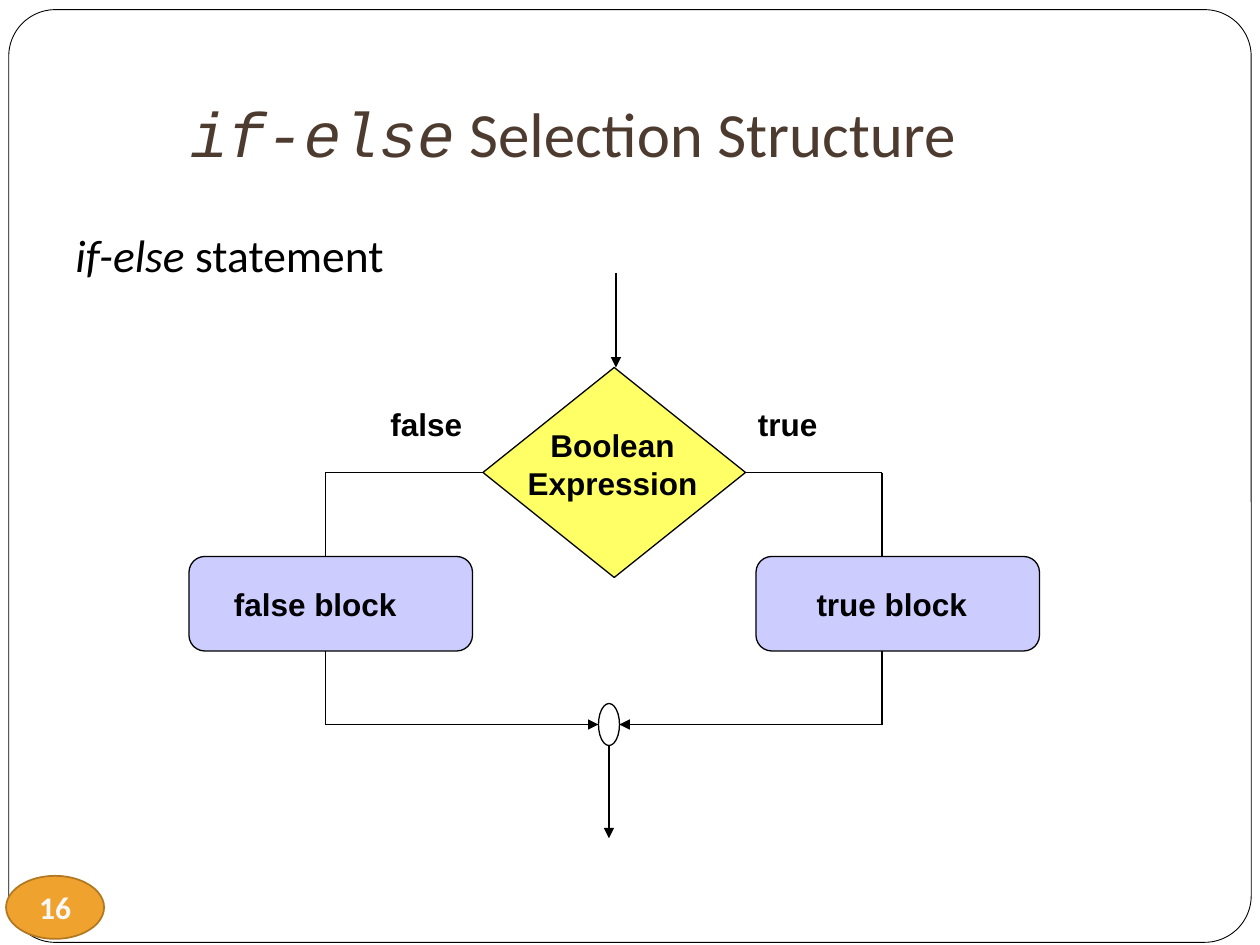
from lxml.etree import SubElement
from pptx import Presentation
from pptx.dml.color import RGBColor
from pptx.enum.shapes import MSO_CONNECTOR as Connector, MSO_SHAPE as Shape
from pptx.enum.text import MSO_ANCHOR as Anchor, MSO_AUTO_SIZE as AutoSize, PP_ALIGN as Align
from pptx.oxml.ns import qn
from pptx.util import Pt

COLORS = {
    "white": "FFFFFF",
    "black": "000000",
    "title": "4E3B30",
    "decision": "FFFF66",
    "block": "CCCCFF",
    "badge": "F0A22E",
    "badge_line": "B27822",
    "badge_text": "F8F8F8",
}


def rgb(name):
    return RGBColor.from_string(COLORS[name])


def add_text(paragraph, text, size=18, font="Arial", color="black", bold=False, italic=False):
    run = paragraph.add_run()
    run.text = text
    run.font.size = Pt(size)
    run.font.name = font
    run.font.color.rgb = rgb(color)
    run.font.bold = bold
    run.font.italic = italic


def place(shape, left, top, width, height):
    shape.left, shape.top = Pt(left), Pt(top)
    shape.width, shape.height = Pt(width), Pt(height)


def set_insets(frame, left, top, right, bottom):
    frame.margin_left, frame.margin_top = Pt(left), Pt(top)
    frame.margin_right, frame.margin_bottom = Pt(right), Pt(bottom)


def add_box(slide, kind, left, top, width, height, fill=None, line="black", weight=0.75):
    shape = slide.shapes.add_shape(kind, Pt(left), Pt(top), Pt(width), Pt(height))
    shape.shadow.inherit = False
    if fill:
        shape.fill.solid()
        shape.fill.fore_color.rgb = rgb(fill)
    else:
        shape.fill.background()
    shape.line.color.rgb = rgb(line)
    shape.line.width = Pt(weight)
    return shape


def add_line(slide, start, end, arrow=False):
    points = [Pt(value) for value in (*start, *end)]
    connector = slide.shapes.add_connector(Connector.STRAIGHT, *points)
    connector.line.color.rgb = rgb("black")
    connector.line.width = Pt(0.75)
    if arrow:
        SubElement(connector.line._ln, qn("a:tailEnd"), type="triangle")
    SubElement(connector._element.spPr, qn("a:effectLst"))
    return connector


def add_label(slide, lines, left, top, width, height, align=Align.LEFT, wrap=False):
    label = slide.shapes.add_textbox(Pt(left), Pt(top), Pt(width), Pt(height))
    frame = label.text_frame
    frame.word_wrap = wrap
    frame.auto_size = AutoSize.SHAPE_TO_FIT_TEXT
    for index, text in enumerate(lines):
        paragraph = frame.add_paragraph() if index else frame.paragraphs[0]
        paragraph.alignment = align
        add_text(paragraph, text, bold=True)


def add_frame(slide):
    frame = add_box(slide, Shape.ROUNDED_RECTANGLE, 5, 5.5, 710, 533, "white", weight=0.5)
    frame.adjustments[0] = 0.05
    badge = add_box(slide, Shape.OVAL, 3.5, 500.5, 56, 36, "badge", "badge_line", 1)
    badge.text_frame.vertical_anchor = Anchor.MIDDLE
    set_insets(badge.text_frame, 0, 0, 0, 0)
    paragraph = badge.text_frame.paragraphs[0]
    paragraph.alignment = Align.CENTER
    add_text(paragraph, "16", font="Calibri", color="badge_text", bold=True)
    for position, shape in enumerate((frame, badge), start=2):
        slide.shapes._spTree.insert(position, shape._element)


def fill_title(title):
    place(title, 101.5, 54, 549, 50.5)
    frame = title.text_frame
    frame.vertical_anchor = Anchor.BOTTOM
    frame.auto_size = AutoSize.NONE
    set_insets(frame, 7.2, 3.6, 7.2, 7.2)
    paragraph = frame.paragraphs[0]
    paragraph.alignment = Align.LEFT
    add_text(paragraph, "if-else", size=36, font="Courier New", color="title", italic=True)
    add_text(paragraph, " Selection Structure", size=36, font="Calibri", color="title")


def fill_body(body):
    place(body, 30, 126, 234, 72)
    body.text_frame.auto_size = AutoSize.NONE
    paragraph = body.text_frame.paragraphs[0]
    paragraph.space_before = Pt(5.8)
    properties = paragraph._p.get_or_add_pPr()
    properties.set("marL", str(Pt(21.6)))
    properties.set("indent", str(Pt(-21.6)))
    SubElement(properties, qn("a:buNone"))
    add_text(paragraph, " if-else ", size=26, font="Calibri", italic=True)
    add_text(paragraph, "statement", size=26, font="Calibri")


def add_branch(slide, decision, site, corner_x, decision_x, block_left, merge_x):
    branch = add_line(slide, (decision_x, 270), (corner_x, 270))
    branch.begin_connect(decision, site)
    add_line(slide, (corner_x, 270), (corner_x, 318))
    add_line(slide, (corner_x, 372), (corner_x, 414))
    add_line(slide, (corner_x, 414), (merge_x, 414), arrow=True)
    add_box(slide, Shape.ROUNDED_RECTANGLE, block_left, 318, 162, 54, "block")


def add_flowchart(slide):
    decision = add_box(slide, Shape.DIAMOND, 276, 210, 150, 120, "decision")
    add_line(slide, (352, 156), (352, 210), arrow=True)
    add_branch(slide, decision, 1, 186, 276, 108, 342)
    add_branch(slide, decision, 3, 504, 426, 432, 354)
    add_box(slide, Shape.OVAL, 342, 402, 12, 24)
    add_line(slide, (348, 426), (348, 479), arrow=True)
    add_label(slide, ["Boolean", "Expression"], 294, 240, 112, 51, align=Align.CENTER)
    add_label(slide, ["false"], 216, 228, 56, 29)
    add_label(slide, ["true"], 426, 228, 65.5, 29, wrap=True)
    add_label(slide, ["false block"], 126.5, 331, 109, 29)
    add_label(slide, ["true block"], 459.5, 331, 101.5, 29)


def main():
    presentation = Presentation()
    presentation.slide_width, presentation.slide_height = Pt(720), Pt(540)
    slide = presentation.slides.add_slide(presentation.slide_layouts[1])
    add_frame(slide)
    fill_title(slide.shapes.title)
    fill_body(slide.placeholders[1])
    add_flowchart(slide)
    presentation.save("out.pptx")


if __name__ == "__main__":
    main()
